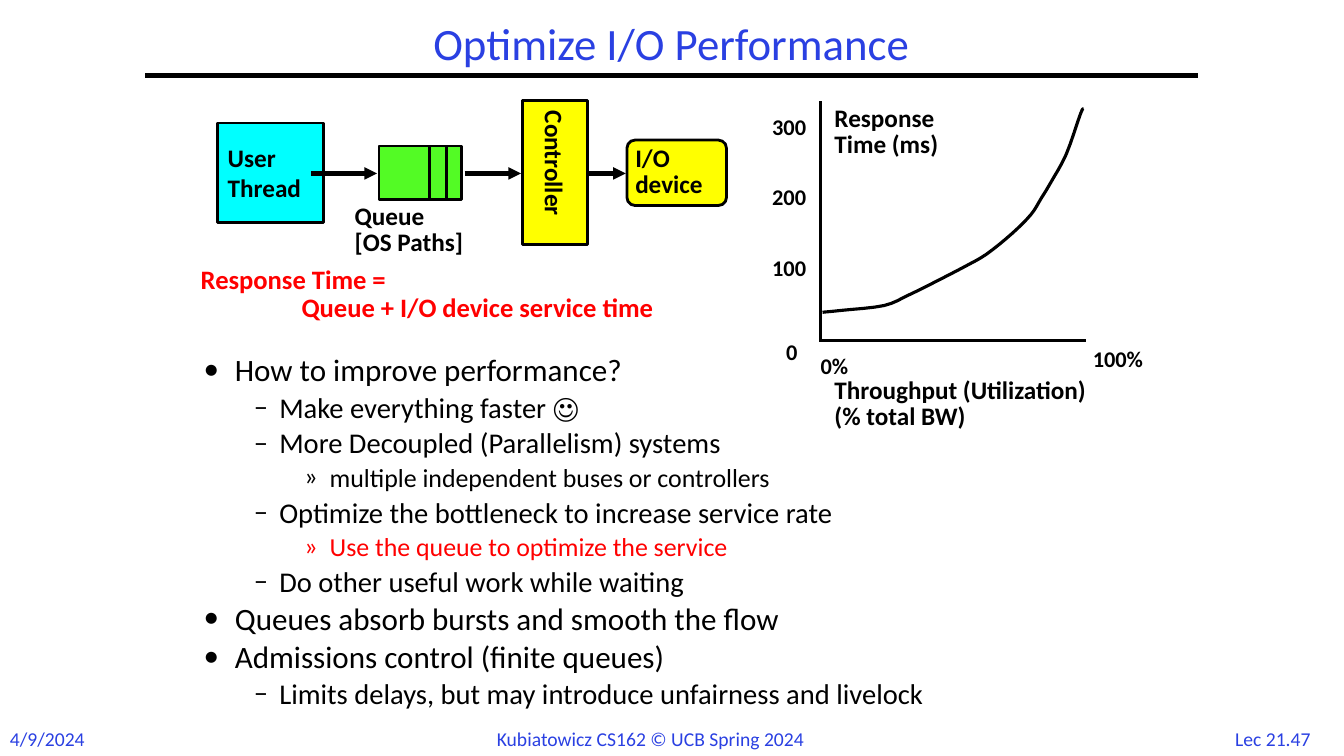
"""Build the slide "Optimize I/O Performance": I/O path diagram, response curve and bullets."""
from dataclasses import dataclass

from lxml.etree import SubElement
from pptx import Presentation
from pptx.dml.color import RGBColor
from pptx.enum.shapes import MSO_CONNECTOR as Connector, MSO_SHAPE as Shape
from pptx.enum.text import MSO_ANCHOR as Anchor, PP_ALIGN as Align
from pptx.oxml.ns import qn
from pptx.util import Cm, Pt


@dataclass(frozen=True)
class Theme:
    font: str = "Calibri"
    blue: RGBColor = RGBColor(0x2A, 0x40, 0xE2)
    black: RGBColor = RGBColor(0x00, 0x00, 0x00)
    red: RGBColor = RGBColor(0xFF, 0x00, 0x00)
    cyan: RGBColor = RGBColor(0x00, 0xFF, 0xFF)
    yellow: RGBColor = RGBColor(0xFF, 0xFF, 0x00)
    green: RGBColor = RGBColor(0x53, 0xFB, 0x25)
    title: float = 32
    levels: tuple = (22.2, 20.4, 18.5)
    formula: float = 19
    label: float = 18
    tick: float = 16
    footer: float = 14


theme = Theme()
deck = Presentation()
deck.slide_width, deck.slide_height = Cm(33.87), Cm(19.05)
page = deck.slides.add_slide(deck.slide_layouts[6])
shapes = page.shapes


def write(box, lines, size, color=theme.black, bold=True, spacing=1.0,
          align=Align.LEFT, anchor=Anchor.TOP, inset=(0.18, 0.08)):
    """Fill a shape with one paragraph per line and return the paragraphs."""
    frame = box.text_frame
    frame.word_wrap = True
    frame.vertical_anchor = anchor
    frame.margin_left = frame.margin_right = Cm(inset[0])
    frame.margin_top = frame.margin_bottom = Cm(inset[1])
    paras = []
    for index, line in enumerate(lines):
        para = frame.add_paragraph() if index else frame.paragraphs[0]
        para.alignment, para.line_spacing = align, spacing
        span = para.add_run()
        span.text = line
        span.font.name, span.font.size, span.font.bold = theme.font, Pt(size), bold
        span.font.color.rgb = color
        paras.append(para)
    return paras


def draw_line(x1, y1, x2, y2, width, arrow=False):
    """Draw a straight black line, with an arrowhead at its end if asked."""
    line = shapes.add_connector(Connector.STRAIGHT, Cm(x1), Cm(y1), Cm(x2), Cm(y2))
    line.line.color.rgb, line.line.width = theme.black, Pt(width)
    if arrow:
        SubElement(line.line._get_or_add_ln(), qn("a:tailEnd"), type="triangle")
    SubElement(line._element.spPr, qn("a:effectLst"))


footers = [
    ("Lec 21.47", 30.71, 2.74, Align.CENTER),
    ("4/9/2024", 0, 2.44, Align.LEFT),
    ("Kubiatowicz CS162 © UCB Spring 2024", 12.27, 9.35, Align.LEFT),
]
for text, left, width, align in footers:
    box = shapes.add_textbox(Cm(left), Cm(18.19), Cm(width), Cm(0.85))
    write(box, [text], theme.footer, theme.blue, False, align=align, inset=(0.25, 0.13))

draw_line(3.66, 1.9, 30.2, 1.9, 3)
title = shapes.add_textbox(Cm(3.66), Cm(0.43), Cm(26.52), Cm(1.47))
write(title, ["Optimize I/O Performance"], theme.title, theme.blue, False, 0.9,
      Align.CENTER, Anchor.MIDDLE, (0.25, 0.13))

bullets = [
    (0, "How to improve performance?"),
    (1, "Make everything faster ☺"),
    (1, "More Decoupled (Parallelism) systems"),
    (2, "multiple independent buses or controllers"),
    (1, "Optimize the bottleneck to increase service rate"),
    (2, "Use the queue to optimize the service"),
    (1, "Do other useful work while waiting"),
    (0, "Queues absorb bursts and smooth the flow"),
    (0, "Admissions control (finite queues)"),
    (1, "Limits delays, but may introduce unfairness and livelock"),
]
bullet_styles = [("•", 0.79, 0.79), ("–", 1.91, 0.64), ("»", 3.18, 0.64)]
body = shapes.add_textbox(Cm(4.88), Cm(8.89), Cm(24), Cm(9.55))
paras = write(body, [text for _, text in bullets], theme.levels[0], bold=False,
              spacing=0.8, inset=(0.25, 0.13))
for para, (level, text) in zip(paras, bullets):
    mark, margin, hanging = bullet_styles[level]
    para.level, para.space_before = level, Pt(6)
    para.runs[0].font.size = Pt(theme.levels[level])
    if text.startswith("Use the queue"):
        para.runs[0].font.color.rgb = theme.red
    props = para._p.get_or_add_pPr()
    props.set("marL", str(Cm(margin)))
    props.set("indent", str(-Cm(hanging)))
    SubElement(props, qn("a:buFont"), typeface=theme.font)
    SubElement(props, qn("a:buChar"), char=mark)

stages = [
    (Shape.RECTANGLE, 5.49, 3.1, 2.67, 2.51, theme.cyan, ["User", "Thread"], 1.0, 0.25),
    (Shape.RECTANGLE, 9.55, 3.68, 2.08, 1.35, theme.green, [], 1.0, 0.25),
    (Shape.RECTANGLE, 13.16, 2.54, 1.65, 3.63, theme.yellow, ["Controller"], 1.0, 0.25),
    (Shape.ROUNDED_RECTANGLE, 15.8, 3.53, 2.51, 1.65, theme.yellow,
     ["I/O", "device"], 0.85, 0.15),
]
for kind, left, top, width, height, fill, lines, spacing, inset in stages:
    stage = shapes.add_shape(kind, Cm(left), Cm(top), Cm(width), Cm(height))
    stage.shadow.inherit = False
    stage.fill.solid()
    stage.fill.fore_color.rgb = fill
    stage.line.color.rgb, stage.line.width = theme.black, Pt(2)
    if kind == Shape.ROUNDED_RECTANGLE:
        stage.adjustments[0] = 0.125
    write(stage, lines, theme.label, spacing=spacing, anchor=Anchor.MIDDLE,
          inset=(inset, 0.13))
    if lines == ["Controller"]:
        stage.text_frame._txBody.bodyPr.set("vert", "eaVert")
        stage.text_frame.margin_top = stage.text_frame.margin_bottom = Cm(0.25)

for start, end in [(7.85, 9.5), (11.71, 13.13), (14.81, 15.77)]:
    draw_line(start, 4.37, end, 4.37, 3, arrow=True)
for divider in (10.82, 11.25):
    draw_line(divider, 5.05, divider, 3.65, 2)

formula = shapes.add_textbox(Cm(4.88), Cm(6.68), Cm(16.94), Cm(1.52))
paras = write(formula, ["Response Time =", "Queue + I/O device service time"],
              theme.formula, theme.red, spacing=0.85)
paras[1]._p.get_or_add_pPr().set("marL", str(Cm(2.54)))

labels = [
    (8.76, 5.08, 3.76, ["Queue", "[OS Paths]"]),
    (20.85, 2.62, 3.43, ["Response", "Time (ms)"]),
    (20.85, 9.47, 8.03, ["Throughput (Utilization)", "(% total BW)"]),
]
for left, top, width, lines in labels:
    box = shapes.add_textbox(Cm(left), Cm(top), Cm(width), Cm(1.45))
    write(box, lines, theme.label, spacing=0.85)

ticks = [(19.28, 2.84 + 1.78 * step, 1.3, str(300 - 100 * step)) for step in range(3)]
ticks += [(19.63, 8.51, 0.66, "0"), (20.5, 8.86, 1.19, "0%"), (27.36, 8.69, 1.85, "100%")]
for left, top, width, text in ticks:
    box = shapes.add_textbox(Cm(left), Cm(top), Cm(width), Cm(0.76))
    write(box, [text], theme.tick, spacing=0.9)

draw_line(20.68, 8.61, 20.68, 2.54, 2)
draw_line(20.7, 8.59, 27.36, 8.59, 2)

knots = [
    (20.73, 7.87), (21.23, 7.82), (22.28, 7.7), (22.89, 7.44), (23.5, 7.14),
    (24.33, 6.71), (24.87, 6.4), (25.5, 5.89), (25.98, 5.41), (26.24, 5.0),
    (26.47, 4.62), (26.87, 3.89), (27.23, 2.87), (27.31, 2.74),
]
padded = [knots[0], *knots, knots[-1]]
curve_points = []
for before, start, end, after in zip(padded, padded[1:], padded[2:], padded[3:]):
    for t in (0.25, 0.5, 0.75, 1):
        curve_points.append(tuple(
            Cm(b + (c - a) * t / 2 + (a - 2.5 * b + 2 * c - d / 2) * t**2
               + (3 * b - a - 3 * c + d) * t**3 / 2)
            for a, b, c, d in zip(before, start, end, after)))
builder = shapes.build_freeform(Cm(knots[0][0]), Cm(knots[0][1]))
builder.add_line_segments(curve_points, close=False)
curve = builder.convert_to_shape()
curve.shadow.inherit = False
curve.fill.background()
curve.line.color.rgb, curve.line.width = theme.black, Pt(2.25)

deck.save("out.pptx")
